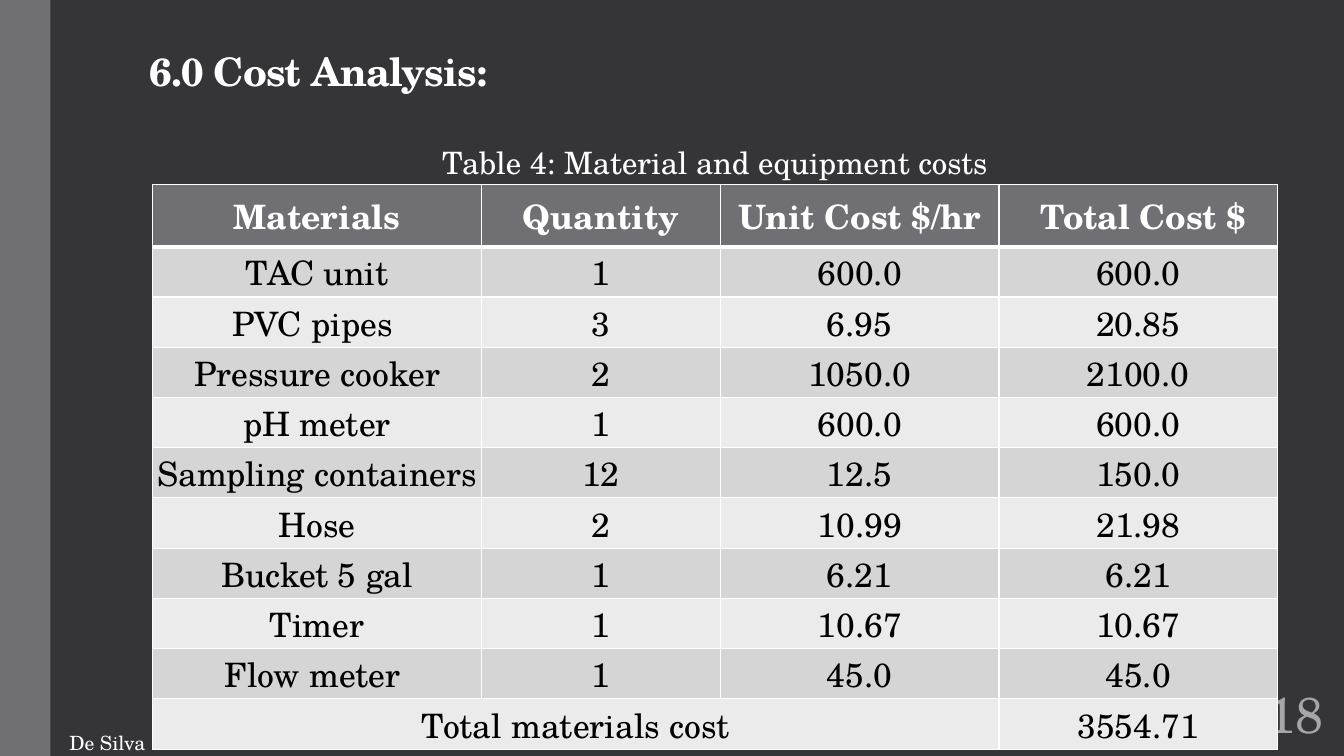
import pptx
import pptx.util
import pptx.dml.color
import pptx.enum.shapes
import pptx.enum.text
import lxml.etree

Pt = pptx.util.Pt
RGBColor = pptx.dml.color.RGBColor
ALIGN = pptx.enum.text.PP_ALIGN
ANCHOR = pptx.enum.text.MSO_ANCHOR

FONT = "TeX Gyre Schola"
NS = "http://schemas.openxmlformats.org/drawingml/2006/main"
DARK = RGBColor(0x35, 0x35, 0x37)
GRAY = RGBColor(0x6F, 0x6F, 0x74)
NUMBER_GRAY = RGBColor(0xA6, 0xA6, 0xA6)
BAND_DARK = RGBColor(0xD5, 0xD5, 0xD6)
BAND_LIGHT = RGBColor(0xEB, 0xEB, 0xEB)
WHITE = RGBColor(0xFF, 0xFF, 0xFF)
BLACK = RGBColor(0, 0, 0)

ROWS = [
    ("Materials", "Quantity", "Unit Cost $/hr", " Total Cost $"),
    ("TAC unit", "1", "600.0", "600.0"),
    ("PVC pipes ", "3", "6.95", "20.85"),
    ("Pressure cooker", "2", "1050.0", "2100.0"),
    ("pH meter", "1", "600.0", "600.0"),
    ("Sampling containers ", "12", "12.5", "150.0"),
    ("Hose", "2", "10.99", "21.98"),
    ("Bucket 5 gal", "1", "6.21", "6.21"),
    ("Timer", "1", "10.67", "10.67"),
    ("Flow meter ", "1", "45.0", "45.0"),
    ("Total materials cost", "", "", "3554.71"),
]
COLUMN_WIDTHS = [235, 170.6, 199, 199]
HEADER_HEIGHT = 44.4
ROW_HEIGHT = 35.9


def write(tf, text, size, color, align=ALIGN.CENTER, bold=False):
    p = tf.paragraphs[0]
    p.text = text
    p.alignment = align
    p.font.name = FONT
    p.font.size = Pt(size)
    p.font.bold = bold
    p.font.color.rgb = color
    return p


def set_border(cell, side, width):
    ln = lxml.etree.SubElement(cell._tc.get_or_add_tcPr(), f"{{{NS}}}ln{side}", w=str(Pt(width)))
    fill = lxml.etree.SubElement(ln, f"{{{NS}}}solidFill")
    lxml.etree.SubElement(fill, f"{{{NS}}}srgbClr", val=str(WHITE))


prs = pptx.Presentation()
prs.slide_width = Pt(960)
prs.slide_height = Pt(540)
s = prs.slides.add_slide(prs.slide_layouts[5])
s.background.fill.solid()
s.background.fill.fore_color.rgb = DARK

panel = s.shapes.add_shape(pptx.enum.shapes.MSO_SHAPE.RECTANGLE, 0, 0, Pt(36), Pt(540))
panel.shadow.inherit = False
panel.fill.solid()
panel.fill.fore_color.rgb = GRAY
panel.line.fill.background()

title = s.shapes.title
title.left, title.top, title.width, title.height = Pt(99.4), Pt(16.6), Pt(352), Pt(54.7)
tf = title.text_frame
tf.auto_size = pptx.enum.text.MSO_AUTO_SIZE.NONE
tf.vertical_anchor = ANCHOR.BOTTOM
p = write(tf, "6.0 Cost Analysis:", 28, WHITE, ALIGN.LEFT, True)
p.line_spacing = 0.85
p.runs[0].font._element.set("spc", "-50")

number = s.shapes.add_textbox(Pt(889.2), Pt(486), Pt(72), Pt(46.8))
tf = number.text_frame
tf.word_wrap = True
tf.vertical_anchor = ANCHOR.MIDDLE
tf.margin_left = tf.margin_right = tf.margin_top = tf.margin_bottom = Pt(3.6)
write(tf, "18", 36, NUMBER_GRAY)

table_height = HEADER_HEIGHT + ROW_HEIGHT * (len(ROWS) - 1)
frame = s.shapes.add_table(len(ROWS), 4, Pt(109), Pt(131.8), Pt(sum(COLUMN_WIDTHS)), Pt(table_height))
table = frame.table
for column, width in zip(table.columns, COLUMN_WIDTHS):
    column.width = Pt(width)
for i, values in enumerate(ROWS):
    header = i == 0
    table.rows[i].height = Pt(HEADER_HEIGHT if header else ROW_HEIGHT)
    for j, text in enumerate(values):
        cell = table.cell(i, j)
        for side in "LRTB":
            thick = (i, side) in [(0, "B"), (1, "T")]
            set_border(cell, side, 3 if thick else 1)
        cell.fill.solid()
        cell.fill.fore_color.rgb = GRAY if header else BAND_DARK if i % 2 else BAND_LIGHT
        if not header:
            cell.vertical_anchor = ANCHOR.BOTTOM
            cell.margin_left = cell.margin_right = cell.margin_top = Pt(0.7)
            cell.margin_bottom = 0
        write(cell.text_frame, text, 24, WHITE if header else BLACK, bold=header)
table.cell(len(ROWS) - 1, 0).merge(table.cell(len(ROWS) - 1, 2))

caption = s.shapes.add_textbox(Pt(109), Pt(99.4), Pt(803.4), Pt(33.8))
caption.text_frame.word_wrap = True
write(caption.text_frame, "Table 4: Material and equipment costs", 22, WHITE)

author = s.shapes.add_textbox(Pt(42.5), Pt(518.4), Pt(69.8), Pt(24.5))
author.text_frame.word_wrap = False
write(author.text_frame, "De Silva", 14, WHITE, ALIGN.LEFT)

prs.save("out.pptx")
